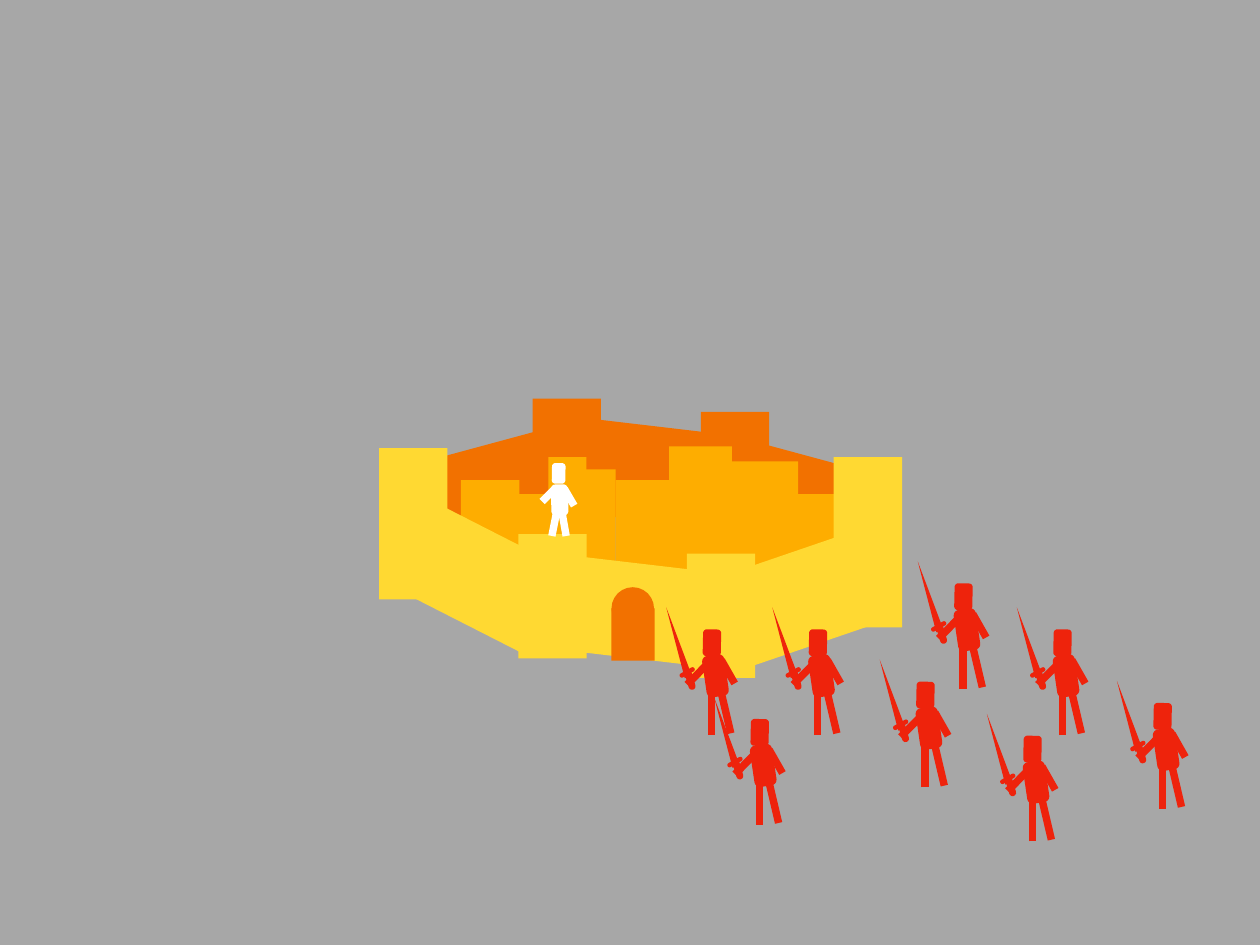
from dataclasses import dataclass

from pptx import Presentation
from pptx.dml.color import RGBColor
from pptx.enum.shapes import MSO_CONNECTOR, MSO_SHAPE
from pptx.oxml.ns import qn
from pptx.util import Cm, Pt
from lxml import etree

RECT = MSO_SHAPE.RECTANGLE
ROUND = MSO_SHAPE.ROUNDED_RECTANGLE
OVAL = MSO_SHAPE.OVAL
STRAIGHT = MSO_CONNECTOR.STRAIGHT

HUES = {
    "grey": "A7A7A7",
    "red": "EE230C",
    "rust": "F27100",
    "amber": "FEAD00",
    "gold": "FFD932",
    "white": "FFFFFF",
}
WIDE, TALL = 36.12, 27.1
TOWER, HIGH = 1.96, 3.56  # usual tower width, usual block height
WALL = (4.57, 2.72)


@dataclass
class Block:
    x: float
    y: float
    w: float
    h: float
    hue: str
    turn: float = 0
    kind: int = RECT
    bend: float = 0
    edge: float = 0


@dataclass
class Limb:
    x1: float
    y1: float
    x2: float
    y2: float
    hue: str


@dataclass
class Plate:
    points: list
    hue: str


def tint(name: str) -> RGBColor:
    return RGBColor.from_string(HUES[name])


def paint(shape, hue: str, edge: float = 0) -> None:
    shape.shadow.inherit = False
    shape.fill.solid()
    shape.fill.fore_color.rgb = tint(hue)
    if edge:
        shape.line.color.rgb = tint(hue)
        shape.line.width = Pt(edge)
    else:
        shape.line.fill.background()


def draw_block(shapes, part: Block, dx: float, dy: float) -> None:
    shape = shapes.add_shape(part.kind, Cm(part.x + dx), Cm(part.y + dy), Cm(part.w), Cm(part.h))
    shape.rotation = part.turn
    if part.kind == ROUND:
        shape.adjustments[0] = part.bend
    paint(shape, part.hue, part.edge)


def draw_limb(shapes, part: Limb, dx: float, dy: float) -> None:
    line = shapes.add_connector(STRAIGHT, Cm(part.x1 + dx), Cm(part.y1 + dy),
                                Cm(part.x2 + dx), Cm(part.y2 + dy))
    line.line.color.rgb = tint(part.hue)
    line.line.width = Pt(6)
    etree.SubElement(line._element.spPr, qn("a:effectLst"))


def draw_plate(shapes, part: Plate, dx: float, dy: float) -> None:
    first, *rest = [(Cm(x + dx), Cm(y + dy)) for x, y in part.points]
    outline = shapes.build_freeform(*first)
    outline.add_line_segments(rest, close=True)
    paint(outline.convert_to_shape(), part.hue)


PENS = {Block: draw_block, Limb: draw_limb, Plate: draw_plate}


def draw_group(slide, parts: list, dx: float = 0, dy: float = 0) -> None:
    group = slide.shapes.add_group_shape()
    for part in parts:
        PENS[type(part)](group.shapes, part, dx, dy)


# Soldier, measured from the straight leg's foot
SOLDIER = [
    Limb(0, 0, 0, -1.28, "red"),
    Limb(0.28, -1.2, 0.55, -0.05, "red"),
    Block(-0.13, -2.22, 0.48, 1.04, "red", 351.6, ROUND, 0.17, 4.5),
    Block(-0.17, -2.95, 0.36, 0.61, "red", 1.2, ROUND, 0.07, 4.5),
    Limb(-0.1, -2.06, -0.7, -1.45, "red"),
    Limb(0.28, -2.15, 0.66, -1.48, "red"),
    # Sword: blade, guard, grip
    Plate([(-1.3, -3.66), (-0.56, -1.69), (-0.77, -1.63)], "red"),
    Block(-0.94, -1.86, 0.48, 0.13, "red", 330.8, ROUND, 0.49),
    Block(-0.72, -1.9, 0.2, 0.61, "red", 163.4, ROUND, 0.5),
]
REAR = [(21.77, 23.65), (27.61, 19.76), (33.32, 23.19),
        (26.52, 22.58), (29.59, 24.13), (30.45, 21.08)]
FRONT = [(20.4, 21.08), (23.44, 21.08)]

CASTLE = [
    # Far towers and walls
    Block(15.27, 11.43, TOWER, HIGH, "rust"),
    Block(20.09, 11.81, TOWER, HIGH, "rust"),
    Plate([(15.67, 12.29), (15.67, 14.78), (11.53, 16.26), (11.53, 13.41)], "rust"),
    Block(16.54, 12.24, *WALL, "rust", 6.7),
    Plate([(21.39, 12.6), (21.39, 15.09), (25.55, 16.56), (25.53, 13.72)], "rust"),
    # Houses
    Block(13.21, 13.77, 1.68, HIGH, "amber"),
    Block(15.72, 13.11, 1.09, 2.95, "amber"),
    Block(17.65, 13.77, 2.79, HIGH, "amber"),
    Block(20.09, 13.23, 2.79, HIGH, "amber"),
    Block(21.39, 14.17, 2.79, HIGH, "amber"),
    Block(19.18, 12.8, 1.8, HIGH, "amber"),
    # Near towers and walls
    Block(10.87, 12.85, TOWER, 4.34, "gold"),
    Block(19.69, 15.88, TOWER, HIGH, "gold"),
    Block(23.9, 13.11, TOWER, 4.88, "gold"),
    Block(20.9, 15.75, *WALL, "gold", 341.1),
    Block(14.4, 14.17, 1.68, HIGH, "amber"),
    Block(11.3, 15.14, *WALL, "gold", 27),
    Block(16.56, 13.46, 1.09, HIGH, "amber"),
    Block(15.7, 16.13, *WALL, "gold", 6.7),
    Block(14.86, 15.32, TOWER, HIGH, "gold"),
    # Watchman
    Limb(15.82, 15.37, 16.05, 14.22, "white"),
    Limb(16.05, 14.35, 16.23, 15.37, "white"),
    Block(15.88, 13.97, 0.33, 0.74, "white", 358.8, ROUND, 0.17, 4.5),
    Block(15.9, 13.36, 0.23, 0.43, "white", 1.2, ROUND, 0.07, 4.5),
    Limb(15.95, 13.97, 15.54, 14.38, "white"),
    Limb(16.18, 14.02, 16.46, 14.5, "white"),
    # Gate
    Block(17.53, 16.84, 1.22, 1.22, "rust", kind=OVAL),
    Block(17.53, 17.45, 1.24, 1.5, "rust"),
]


def main() -> None:
    deck = Presentation()
    deck.slide_width, deck.slide_height = Cm(WIDE), Cm(TALL)
    slide = deck.slides.add_slide(deck.slide_layouts[6])

    # Backdrop
    draw_block(slide.shapes, Block(-0.81, -0.76, 40.54, 30.51, "grey"), 0, 0)

    # Siege, back to front
    for foot in REAR:
        draw_group(slide, SOLDIER, *foot)
    draw_group(slide, CASTLE)
    for foot in FRONT:
        draw_group(slide, SOLDIER, *foot)

    deck.save("out.pptx")


if __name__ == "__main__":
    main()
